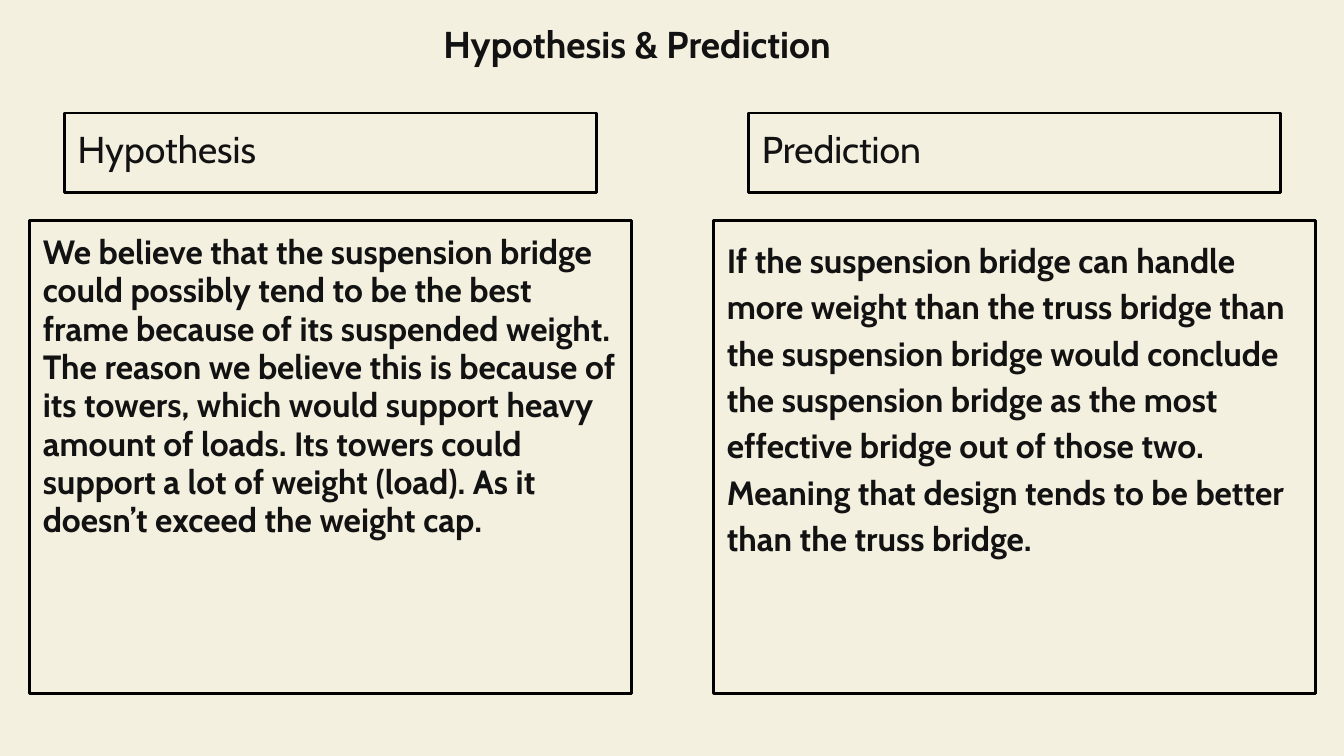
from dataclasses import dataclass

from pptx import Presentation
from pptx import util as u
from pptx.dml.color import RGBColor
from pptx.enum import shapes, text

# Widescreen slide, 16 by 9
WIDTH = 10
HEIGHT = WIDTH * 9 / 16
COLORS = {"background": "F3F0DF", "text": "121212", "border": "000000"}
FONT = "Cabin"
INSET = u.Inches(0.1)

# Two columns, each with a heading centred over its body
COLUMN_CENTERS = (0.246 * WIDTH, 0.755 * WIDTH)
HEADING_TOP, HEADING_WIDTH, HEADING_HEIGHT = 0.84, 3.96, 0.59
BODY_TOP, BODY_WIDTH, BODY_HEIGHT = 1.64, 4.48, 3.52


@dataclass
class Style:
    size: int
    bold: bool = False
    line_spacing: float = 1.0
    space_after: int = 0


@dataclass
class Column:
    heading: str
    body: str
    body_style: Style


COLUMNS = (
    Column(
        "Hypothesis",
        "We believe that the suspension bridge could possibly tend to be the best "
        "frame because of its suspended weight. The reason we believe this is because "
        "of its towers, which would support heavy amount of loads. Its towers could "
        "support a lot of weight (load). As it doesn’t exceed the weight cap.",
        Style(18, bold=True, line_spacing=0.95),
    ),
    Column(
        "Prediction",
        "If the suspension bridge can handle more weight than the truss bridge than "
        "the suspension bridge would conclude the suspension bridge as the most "
        "effective bridge out of those two. Meaning that design tends to be better "
        "than the truss bridge.",
        Style(18, bold=True, line_spacing=1.15, space_after=12),
    ),
)


def color(name: str) -> RGBColor:
    return RGBColor.from_string(COLORS[name])


def write_text(shape, content: str, style: Style) -> None:
    frame = shape.text_frame
    frame.word_wrap = True
    frame.vertical_anchor = text.MSO_ANCHOR.TOP
    frame.margin_left = frame.margin_right = INSET
    frame.margin_top = frame.margin_bottom = INSET
    frame.text = content
    paragraph = frame.paragraphs[0]
    paragraph.alignment = text.PP_ALIGN.LEFT
    paragraph.line_spacing = style.line_spacing
    paragraph.space_after = u.Pt(style.space_after)
    font = paragraph.runs[0].font
    font.name, font.size, font.bold = FONT, u.Pt(style.size), style.bold
    font.color.rgb = color("text")


def add_box(slide, center: float, top: float, width: float, height: float,
            content: str, style: Style) -> None:
    shape = slide.shapes.add_shape(
        shapes.MSO_SHAPE.RECTANGLE, u.Inches(center - width / 2), u.Inches(top),
        u.Inches(width), u.Inches(height))
    shape.shadow.inherit = False
    shape.fill.background()
    shape.line.color.rgb = color("border")
    shape.line.width = u.Pt(1.5)
    write_text(shape, content, style)


def main() -> None:
    presentation = Presentation()
    presentation.slide_width = u.Inches(WIDTH)
    presentation.slide_height = u.Inches(HEIGHT)
    slide = presentation.slides.add_slide(presentation.slide_layouts[6])
    slide.background.fill.solid()
    slide.background.fill.fore_color.rgb = color("background")

    # Headings and bodies
    for center, column in zip(COLUMN_CENTERS, COLUMNS):
        add_box(slide, center, HEADING_TOP, HEADING_WIDTH, HEADING_HEIGHT,
                column.heading, Style(20))
        add_box(slide, center, BODY_TOP, BODY_WIDTH, BODY_HEIGHT,
                column.body, column.body_style)

    # Title
    title = slide.shapes.add_textbox(
        u.Inches(0.32 * WIDTH), u.Inches(0.06), u.Inches(3.61), u.Inches(0.51))
    write_text(title, "Hypothesis & Prediction", Style(20, bold=True))

    presentation.save("out.pptx")


if __name__ == "__main__":
    main()
